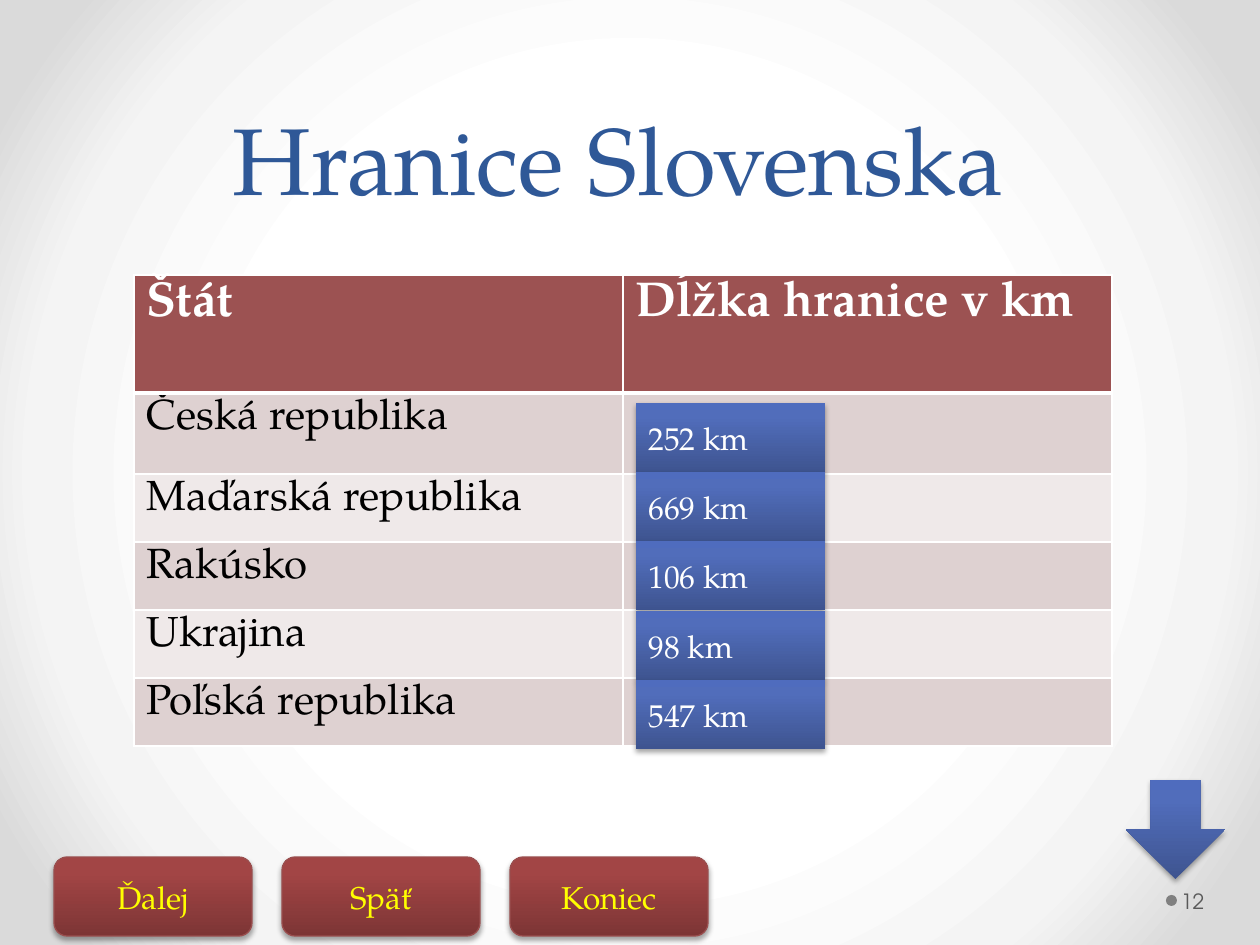
from dataclasses import dataclass

from lxml import etree
from pptx import Presentation
from pptx import util as u
from pptx.dml.color import RGBColor
from pptx.enum import shapes, text
from pptx.oxml import parse_xml
from pptx.oxml.ns import nsdecls, qn


@dataclass(frozen=True)
class Theme:
    """Colours, fonts and type sizes of the slide."""
    serif: str = "TeX Gyre Pagella"
    sans: str = "TeX Gyre Adventor"
    title: str = "2F5897"
    white: str = "FFFFFF"
    black: str = "000000"
    yellow: str = "FFFF00"
    number: str = "595959"
    dot: str = "808080"
    header: str = "9C5252"
    bands: tuple = ("DED1D1", "EFE9E9")
    button_line: str = "9A4E4E"
    red: tuple = ((0, "7D3535"), (80, "A24545"), (100, "A44343"))
    blue: tuple = ((0, "3E5490"), (80, "516DBB"), (100, "4F6CBE"))
    backdrop: tuple = ((50, "FFFFFF"), (76, "F4F4F4"), (92, "DADADA"))
    title_size: int = 54
    title_spacing: int = 58
    header_size: int = 28
    body_size: int = 24
    label_size: int = 18
    number_size: int = 12


THEME = Theme()
BORDERS = {"L": 1, "R": 1, "T": 1, "B": 1}
STATES = ("Česká republika", "Maďarská republika", "Rakúsko", "Ukrajina", "Poľská republika")
LENGTHS = ("252 km", "669 km", "106 km", "98 km", "547 km")


def px(length):
    """Turn px at 126 to the inch into EMU."""
    return u.Emu(round(length * 914400 / 126))


def place(box):
    """Turn a px box into EMU."""
    return [px(length) for length in box]


def style(paragraph, size, color, font=THEME.serif, bold=False):
    """Set the font of a paragraph."""
    paragraph.font.name = font
    paragraph.font.size = u.Pt(size)
    paragraph.font.bold = bold
    paragraph.font.color.rgb = RGBColor.from_string(color)


def fill_gradient(fill, stops, owner):
    """Give a fill upward gradient stops and return its element."""
    fill.gradient()
    fill.gradient_angle = 90
    gradient = next(owner.iter(qn("a:gradFill")))
    stop_list = gradient.find(qn("a:gsLst"))
    for old in list(stop_list):
        stop_list.remove(old)
    for position, color in stops:
        stop = etree.SubElement(stop_list, qn("a:gs"), pos=str(position * 1000))
        etree.SubElement(stop, qn("a:srgbClr"), val=color)
    return gradient


def add_raised(slide, kind, box, stops, line=None):
    """Add a gradient shape with a soft shadow below."""
    shape = slide.shapes.add_shape(kind, *place(box))
    properties = shape._element.spPr
    fill_gradient(shape.fill, stops, properties)
    if line:
        shape.line.color.rgb = RGBColor.from_string(line)
        shape.line.width = u.Pt(0.75)
    else:
        shape.line.fill.background()
    properties.append(parse_xml(
        f'<a:effectLst {nsdecls("a")}><a:outerShdw blurRad="{u.Pt(3.1)}" dist="{u.Pt(1.8)}" '
        f'dir="5400000" rotWithShape="0"><a:srgbClr val="{THEME.black}">'
        '<a:alpha val="35000"/></a:srgbClr></a:outerShdw></a:effectLst>'))
    return shape


def label(shape, words, color, align):
    """Write one centred-height line on a shape."""
    frame = shape.text_frame
    frame.text = words
    frame.vertical_anchor = text.MSO_ANCHOR.MIDDLE
    frame.paragraphs[0].alignment = align
    style(frame.paragraphs[0], THEME.label_size, color)


def paint_background(slide):
    """Paint the circular backdrop gradient."""
    fill = slide.background.fill
    gradient = fill_gradient(fill, THEME.backdrop, slide._element)
    gradient.replace(gradient.find(qn("a:lin")), parse_xml(
        f'<a:path {nsdecls("a")} path="circle">'
        '<a:fillToRect l="50000" t="50000" r="50000" b="50000"/></a:path>'))


def write_title(slide, box):
    """Place the heading in the title placeholder."""
    title = slide.shapes.title
    title.left, title.top, title.width, title.height = place(box)
    frame = title.text_frame
    frame.text = "Hranice Slovenska "
    frame.auto_size = text.MSO_AUTO_SIZE.NONE
    frame.vertical_anchor = text.MSO_ANCHOR.BOTTOM
    heading = frame.paragraphs[0]
    heading.alignment = text.PP_ALIGN.CENTER
    heading.line_spacing = u.Pt(THEME.title_spacing)
    style(heading, THEME.title_size, THEME.title)


def format_cell(cell, color, borders):
    """Fill a table cell and draw its white borders."""
    cell.fill.solid()
    cell.fill.fore_color.rgb = RGBColor.from_string(color)
    properties = cell._tc.get_or_add_tcPr()
    for index, (side, width) in enumerate(borders.items()):
        properties.insert(index, parse_xml(
            f'<a:ln{side} {nsdecls("a")} w="{u.Pt(width)}"><a:solidFill>'
            f'<a:srgbClr val="{THEME.white}"/></a:solidFill></a:ln{side}>'))


def add_border_table(slide, box):
    """Add the table of neighbouring states."""
    rows = [("Štát", "Dĺžka hranice v km")] + [(state, "") for state in STATES]
    table = slide.shapes.add_table(len(rows), 2, *place(box)).table
    for row, height in zip(table.rows, (118, 81, 68, 68, 68, 68)):
        row.height = px(height)
    for r, values in enumerate(rows):
        head = r == 0
        color = THEME.header if head else THEME.bands[(r - 1) % 2]
        borders = {**BORDERS, "B": 3} if head else {**BORDERS, "T": 3 if r == 1 else 1}
        for c, words in enumerate(values):
            cell = table.cell(r, c)
            format_cell(cell, color, borders)
            if words:
                cell.text = words
                style(cell.text_frame.paragraphs[0],
                      THEME.header_size if head else THEME.body_size,
                      THEME.white if head else THEME.black, bold=head)


def add_lengths(slide, box):
    """Stack the border lengths evenly in a box."""
    left, top, width, height = box
    count = len(LENGTHS)
    for i, length in enumerate(LENGTHS):
        card = add_raised(slide, shapes.MSO_SHAPE.RECTANGLE,
                          (left, top + i * height // count, width, height // count), THEME.blue)
        label(card, length, THEME.white, text.PP_ALIGN.LEFT)


def add_navigation(slide, box):
    """Set three buttons side by side in a box."""
    left, top, width, height = box
    gap = 30
    names = ("Ďalej", "Späť", "Koniec")
    button_width = (width - gap * (len(names) - 1)) // len(names)
    for i, name in enumerate(names):
        button = add_raised(slide, shapes.MSO_SHAPE.ROUNDED_RECTANGLE,
                            (left + i * (button_width + gap), top, button_width, height),
                            THEME.red, THEME.button_line)
        label(button, name, THEME.yellow, text.PP_ALIGN.CENTER)


def add_page_number(slide, box):
    """Add the dot and the page number."""
    left, top, width, height = box
    size = 11
    dot = slide.shapes.add_shape(shapes.MSO_SHAPE.OVAL,
                                 *place((left, top + (height - size) // 2, size, size)))
    dot.shadow.inherit = False
    dot.fill.solid()
    dot.fill.fore_color.rgb = RGBColor.from_string(THEME.dot)
    dot.line.fill.background()
    number = slide.shapes.add_textbox(*place((left + size, top, width - size, height)))
    frame = number.text_frame
    frame.word_wrap = True
    frame.margin_left = px(4)
    frame.vertical_anchor = text.MSO_ANCHOR.MIDDLE
    frame.text = "12"
    style(frame.paragraphs[0], THEME.number_size, THEME.number, THEME.sans)


def main():
    """Build and save the slide."""
    deck = Presentation()
    deck.slide_width, deck.slide_height = px(1260), px(945)
    slide = deck.slides.add_slide(deck.slide_layouts[5])
    paint_background(slide)
    add_navigation(slide, (54, 857, 654, 79))
    write_title(slide, (63, 0, 1134, 221))
    add_page_number(slide, (1166, 876, 88, 50))
    add_border_table(slide, (134, 275, 978, 471))
    add_lengths(slide, (636, 403, 189, 347))
    add_raised(slide, shapes.MSO_SHAPE.DOWN_ARROW, (1126, 780, 99, 99), THEME.blue)
    deck.save("out.pptx")


if __name__ == "__main__":
    main()
